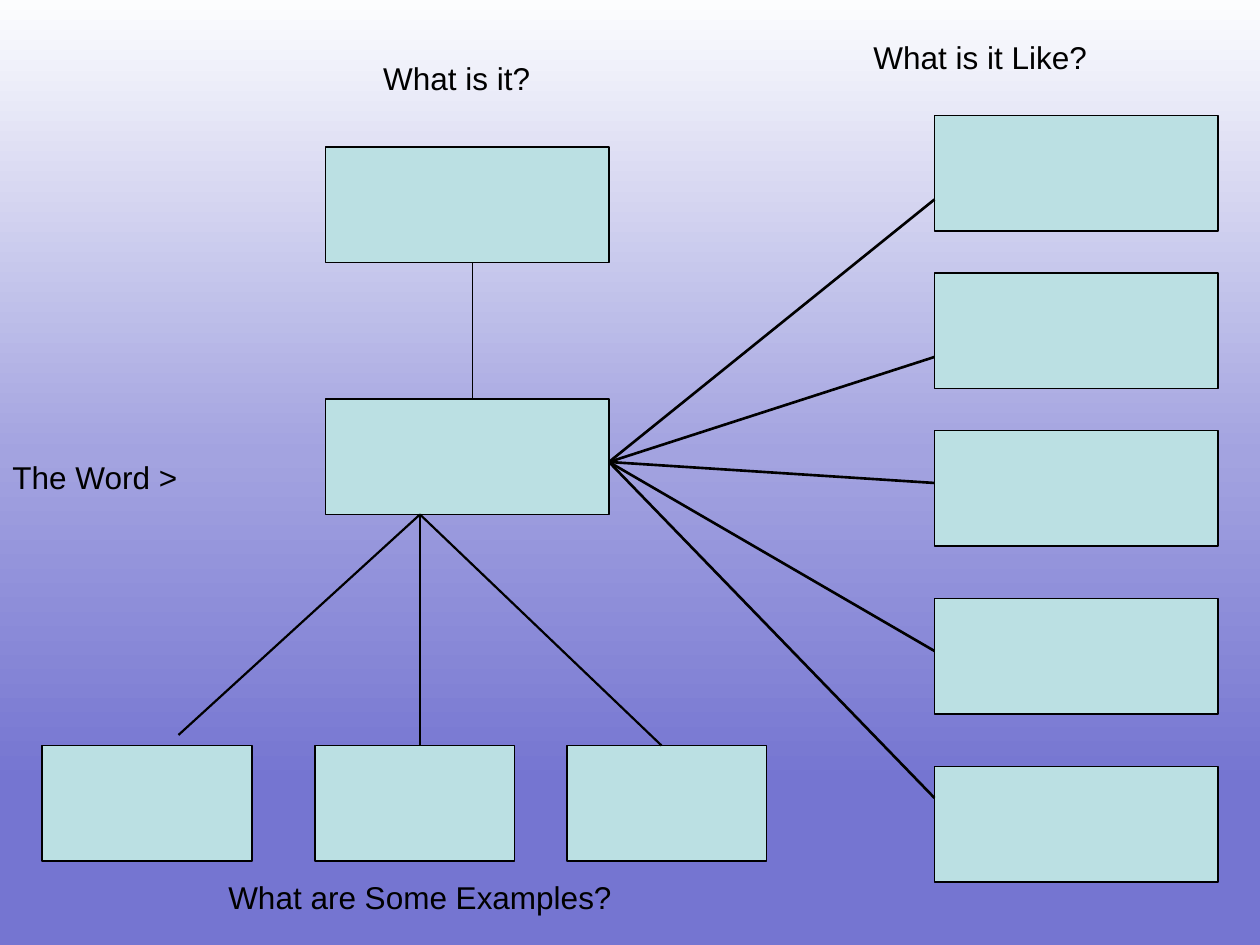
"""Builds a word map slide linking a word to its meaning, likenesses and examples."""
import pptx
import pptx.dml.color
import pptx.enum.shapes
import pptx.enum.text
import pptx.oxml.ns
import pptx.util
from lxml import etree

Pt = pptx.util.Pt
qn = pptx.oxml.ns.qn
LEFT = pptx.enum.text.PP_ALIGN.LEFT
CENTER = pptx.enum.text.PP_ALIGN.CENTER


def color(value):
    return pptx.dml.color.RGBColor.from_string(value)


class WordMap:
    font = "Arial"
    text_size = 18
    ink = "000000"
    box_fill = "BBE0E3"
    box_height = 66

    def __init__(self, presentation):
        self.slide = presentation.slides.add_slide(presentation.slide_layouts[6])

    def background(self, stops):
        fill = self.slide.background.fill
        fill.gradient()
        fill.gradient_angle = 270
        stop_list = next(self.slide.element.iter(qn("a:gsLst")))
        for stop in list(stop_list):
            stop_list.remove(stop)
        for percent, value in stops:
            stop = etree.SubElement(stop_list, qn("a:gs"), pos=str(percent * 1000))
            etree.SubElement(stop, qn("a:srgbClr"), val=value)

    def box(self, left, top, width=162):
        shape = self.slide.shapes.add_shape(
            pptx.enum.shapes.MSO_SHAPE.RECTANGLE,
            Pt(left), Pt(top), Pt(width), Pt(self.box_height))
        shape.shadow.inherit = False
        shape.fill.solid()
        shape.fill.fore_color.rgb = color(self.box_fill)
        shape.line.color.rgb = color(self.ink)
        shape.line.width = Pt(0.75)

    def label(self, text, left, top, width, alignment=LEFT):
        shape = self.slide.shapes.add_textbox(Pt(left), Pt(top), Pt(width), Pt(36))
        shape.text_frame.word_wrap = True
        paragraph = shape.text_frame.paragraphs[0]
        paragraph.text = text
        paragraph.alignment = alignment
        paragraph.font.name = self.font
        paragraph.font.size = Pt(self.text_size)
        paragraph.font.color.rgb = color(self.ink)

    def line(self, start, end, width):
        connector = self.slide.shapes.add_connector(
            pptx.enum.shapes.MSO_CONNECTOR.STRAIGHT,
            *(Pt(value) for value in (*start, *end)))
        connector.line.color.rgb = color(self.ink)
        connector.line.width = Pt(width)
        etree.SubElement(connector.element.spPr, qn("a:effectLst"))


def main():
    presentation = pptx.Presentation()
    presentation.slide_width = Pt(720)
    presentation.slide_height = Pt(540)
    word_map = WordMap(presentation)
    word_map.background([(0, "FCFDFE"), (48, "A3A3E0"), (83, "7575D1"), (100, "7575D1")])

    word_map.label("What are Some Examples?", 30, 498, 420, CENTER)
    for top in (84, 228):
        word_map.box(186, top)
    for top in (66, 156, 246, 342, 438):
        word_map.box(534, top)
    for left, width in ((24, 120), (180, 114), (324, 114)):
        word_map.box(left, 426, width)
    word_map.label("The Word >", 0, 258, 168)
    word_map.label("What is it?", 168, 30, 186, CENTER)
    word_map.label("What is it Like?", 492, 18, 228)

    word_map.line((270, 150), (270, 228), 1)
    for example_end in ((102, 420), (240, 426), (378, 426)):
        word_map.line((240, 294), example_end, 1.25)
    for likeness_y in (114, 204, 276, 372, 456):
        word_map.line((348, 264), (534, likeness_y), 1.5)
    presentation.save("out.pptx")


if __name__ == "__main__":
    main()
